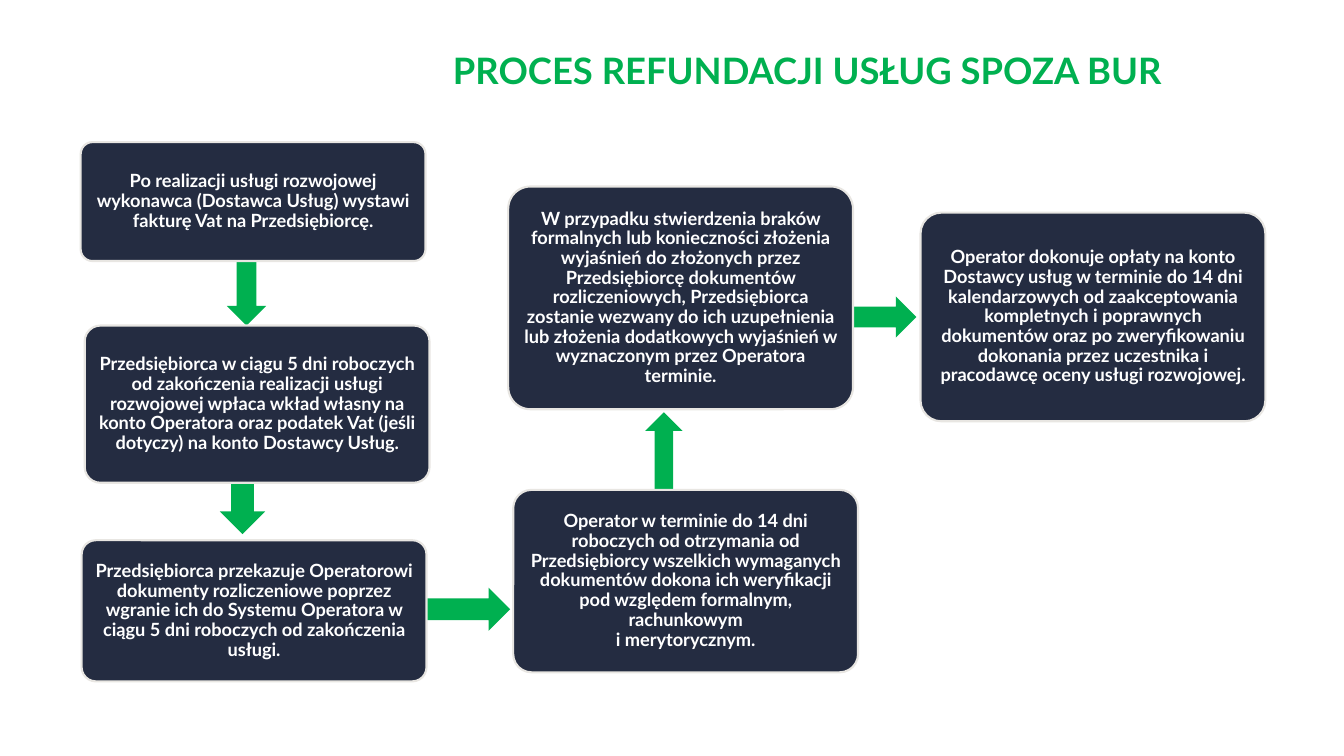
from dataclasses import dataclass

from pptx import Presentation
from pptx.dml.color import RGBColor
from pptx.enum.shapes import MSO_SHAPE
from pptx.enum.text import MSO_ANCHOR, PP_ALIGN
from pptx.util import Inches, Pt


@dataclass(frozen=True)
class Theme:
    font: str = "Lato"
    green: RGBColor = RGBColor(0x00, 0xB0, 0x50)
    navy: RGBColor = RGBColor(0x24, 0x2C, 0x41)
    border: RGBColor = RGBColor(0xE8, 0xE6, 0xE2)
    white: RGBColor = RGBColor(0xFF, 0xFF, 0xFF)
    title_size: Pt = Pt(26)
    step_size: Pt = Pt(13)
    border_width: Pt = Pt(1.5)


THEME = Theme()
STEP_WIDTH = 3.42
STEP_INSET = 0.05

# Steps: left, top, height within the flow area, text
STEPS = [
    (0, 0, 1.18,
     "Po realizacji usługi rozwojowej wykonawca (Dostawca Usług) wystawi "
     "fakturę Vat na Przedsiębiorcę."),
    (0.04, 1.82, 1.56,
     "Przedsiębiorca w ciągu 5 dni roboczych od zakończenia realizacji usługi "
     "rozwojowej wpłaca wkład własny na konto Operatora oraz podatek Vat "
     "(jeśli dotyczy) na konto Dostawcy Usług."),
    (0.01, 3.95, 1.4,
     "Przedsiębiorca przekazuje Operatorowi dokumenty rozliczeniowe poprzez "
     "wgranie ich do Systemu Operatora w ciągu 5 dni roboczych od zakończenia "
     "usługi."),
    (4.29, 3.45, 1.81,
     "Operator w terminie do 14 dni roboczych od otrzymania od Przedsiębiorcy "
     "wszelkich wymaganych dokumentów dokona ich weryfikacji pod względem "
     "formalnym, rachunkowym\ni merytorycznym."),
    (4.24, 0.44, 2.21,
     "W przypadku stwierdzenia braków formalnych lub konieczności złożenia "
     "wyjaśnień do złożonych przez Przedsiębiorcę dokumentów rozliczeniowych, "
     "Przedsiębiorca zostanie wezwany do ich uzupełnienia lub złożenia "
     "dodatkowych wyjaśnień w wyznaczonym przez Operatora terminie."),
    (8.33, 0.7, 2.07,
     "Operator dokonuje opłaty na konto Dostawcy usług w terminie do 14 dni "
     "kalendarzowych od zaakceptowania kompletnych i poprawnych dokumentów oraz "
     "po zweryfikowaniu dokonania przez uczestnika i pracodawcę oceny usługi "
     "rozwojowej."),
]

# Arrows: direction, left, top, width, height within the flow area
ARROWS = [
    (MSO_SHAPE.DOWN_ARROW, 1.45, 1.01, 0.39, 0.81),
    (MSO_SHAPE.DOWN_ARROW, 1.38, 2.96, 0.45, 0.93),
    (MSO_SHAPE.RIGHT_ARROW, 2.77, 4.42, 1.49, 0.43),
    (MSO_SHAPE.UP_ARROW, 5.6, 2.68, 0.37, 0.89),
    (MSO_SHAPE.RIGHT_ARROW, 7.12, 1.53, 1.17, 0.41),
]


def write_centred(paragraph, text, size, color):
    paragraph.alignment = PP_ALIGN.CENTER
    for index, line in enumerate(text.split("\n")):
        if index:
            paragraph.add_line_break()
        run = paragraph.add_run()
        run.text = line
        run.font.name = THEME.font
        run.font.size = size
        run.font.bold = True
        run.font.color.rgb = color


def add_filled(slide, kind, left, top, width, height, color):
    figure = slide.shapes.add_shape(
        kind, Inches(left), Inches(top), Inches(width), Inches(height))
    figure.shadow.inherit = False
    figure.fill.solid()
    figure.fill.fore_color.rgb = color
    figure.line.fill.background()
    return figure


def add_title(slide, left, top, width, height):
    title = slide.shapes.add_textbox(
        Inches(left), Inches(top), Inches(width), Inches(height))
    title.text_frame.word_wrap = True
    write_centred(title.text_frame.paragraphs[0],
                  "PROCES REFUNDACJI USŁUG SPOZA BUR",
                  THEME.title_size, THEME.green)


def add_step(slide, left, top, height, text):
    step = add_filled(slide, MSO_SHAPE.ROUNDED_RECTANGLE,
                      left, top, STEP_WIDTH, height, THEME.navy)
    step.adjustments[0] = 0.1
    step.line.color.rgb = THEME.border
    step.line.width = THEME.border_width
    frame = step.text_frame
    frame.word_wrap = True
    frame.vertical_anchor = MSO_ANCHOR.MIDDLE
    frame.margin_left = frame.margin_right = Inches(STEP_INSET)
    frame.margin_top = frame.margin_bottom = Inches(STEP_INSET)
    frame.paragraphs[0].line_spacing = 0.9
    write_centred(frame.paragraphs[0], text, THEME.step_size, THEME.white)


def add_flow(slide, left, top):
    # Arrows lie behind the steps, which cover their tails
    for kind, x, y, width, height in ARROWS:
        add_filled(slide, kind, left + x, top + y, width, height, THEME.green)
    for x, y, height, text in STEPS:
        add_step(slide, left + x, top + y, height, text)


def main():
    presentation = Presentation()
    presentation.slide_width = Inches(13.33)
    presentation.slide_height = Inches(7.5)
    slide = presentation.slides.add_slide(presentation.slide_layouts[6])
    add_flow(slide, 0.8, 1.41)
    add_title(slide, 4.02, 0.43, 7.98, 0.54)
    presentation.save("out.pptx")


if __name__ == "__main__":
    main()
